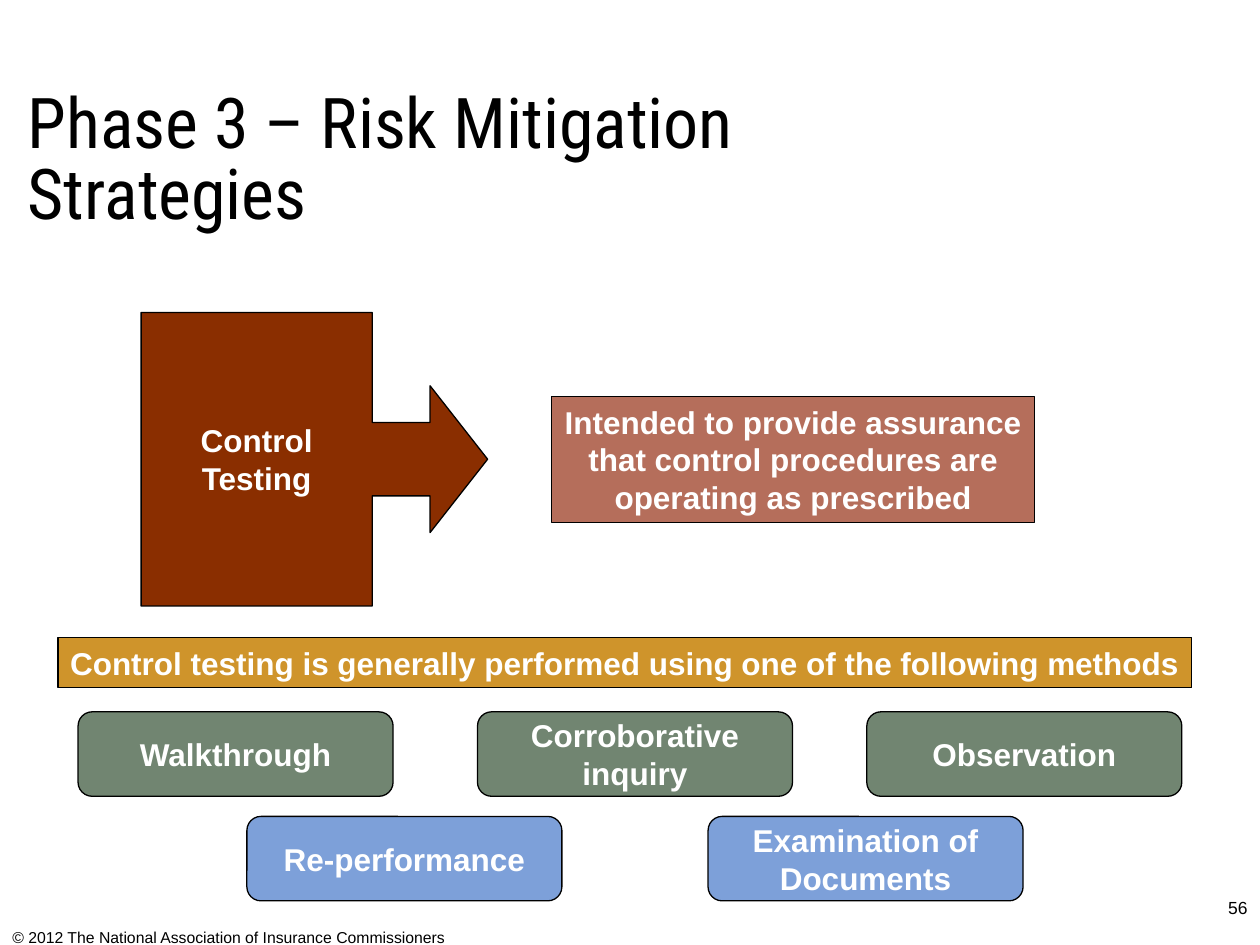
from pptx import Presentation
from pptx.dml.color import RGBColor
from pptx.enum.shapes import MSO_SHAPE
from pptx.enum.text import MSO_ANCHOR, MSO_AUTO_SIZE, PP_ALIGN
from pptx.util import Inches, Pt

RECT = MSO_SHAPE.RECTANGLE
ROUNDED = MSO_SHAPE.ROUNDED_RECTANGLE
CALLOUT = MSO_SHAPE.RIGHT_ARROW_CALLOUT
LEFT, CENTER, RIGHT = PP_ALIGN.LEFT, PP_ALIGN.CENTER, PP_ALIGN.RIGHT
MIDDLE = MSO_ANCHOR.MIDDLE
NO_AUTOFIT = MSO_AUTO_SIZE.NONE

COLORS = {
    "text": "000000",
    "light": "FFFFFF",
    "line": "000000",
    "callout": "8A2E00",
    "purpose": "B56E5B",
    "banner": "CF942B",
    "green": "718571",
    "blue": "7DA0D9",
}


def rgb(name):
    return RGBColor.from_string(COLORS[name])


def format_text(tf, size, color, align, font="Arial", bold=False):
    for p in tf.paragraphs:
        p.alignment = align
        for r in p.runs:
            r.font.name = font
            r.font.size = Pt(size)
            r.font.bold = bold
            r.font.color.rgb = rgb(color)


def add_box(s, kind, box, text, fill):
    sp = s.shapes.add_shape(kind, *map(Inches, box))
    sp.shadow.inherit = False
    sp.fill.solid()
    sp.fill.fore_color.rgb = rgb(fill)
    sp.line.color.rgb = rgb("line")
    sp.line.width = Pt(0.75)
    tf = sp.text_frame
    tf.word_wrap = False
    tf.vertical_anchor = MIDDLE
    tf.text = text
    format_text(tf, 18, "light", CENTER, bold=True)
    return sp


def add_title(s, box, text):
    sp = s.shapes.title
    sp.left, sp.top, sp.width, sp.height = map(Inches, box)
    tf = sp.text_frame
    tf.text = text
    tf.word_wrap = True
    tf.auto_size = NO_AUTOFIT
    tf.vertical_anchor = MIDDLE
    tf.paragraphs[0].line_spacing = 0.85
    format_text(tf, 40, "text", LEFT, "Roboto Condensed")


def add_note(s, box, text, size, align):
    tf = s.shapes.add_textbox(*map(Inches, box)).text_frame
    tf.word_wrap = True
    tf.text = text
    format_text(tf, size, "text", align)


def add_definition(s, box):
    left, top, width, height = box
    callout = add_box(s, CALLOUT, (left, top, 2.75, height), "Control\nTesting", "callout")
    for i, value in enumerate((0.25, 0.25, 0.196, 0.667)):
        callout.adjustments[i] = value
    purpose_width, purpose_height = 3.83, 1
    add_box(
        s, RECT,
        (left + width - purpose_width, top + (height - purpose_height) / 2,
         purpose_width, purpose_height),
        "Intended to provide assurance\nthat control procedures are\noperating as prescribed",
        "purpose",
    )


def add_methods(s, box):
    left, top, width, height = box
    add_box(s, RECT, (left, top, width, 0.4),
            "Control testing is generally performed using one of the following methods",
            "banner")
    item_width, item_height = 2.5, 0.67
    bottom_row = top + height - item_height
    rows = (
        (top + 0.59, "green", ((0.16, "Walkthrough"), (3.33, "Corroborative\ninquiry"),
                               (6.42, "Observation"))),
        (bottom_row, "blue", ((1.5, "Re-performance"), (5.16, "Examination of\nDocuments"))),
    )
    for y, fill, items in rows:
        for offset, text in items:
            add_box(s, ROUNDED, (left + offset, y, item_width, item_height), text, fill)


def main():
    prs = Presentation()
    prs.slide_width, prs.slide_height = Inches(10), Inches(7.5)
    s = prs.slides.add_slide(prs.slide_layouts[5])
    add_title(s, (0.12, 0.58, 9.33, 1.42), "Phase 3 – Risk Mitigation\vStrategies")
    add_definition(s, (1.12, 2.48, 7.09, 2.33))
    add_methods(s, (0.46, 5.06, 9, 2.09))
    add_note(s, (0, 7.31, 5.58, 0.25),
             "© 2012 The National Association of Insurance Commissioners", 9, LEFT)
    add_note(s, (7.67, 7.07, 2.33, 0.27), "56", 10, RIGHT)
    prs.save("out.pptx")


if __name__ == "__main__":
    main()
